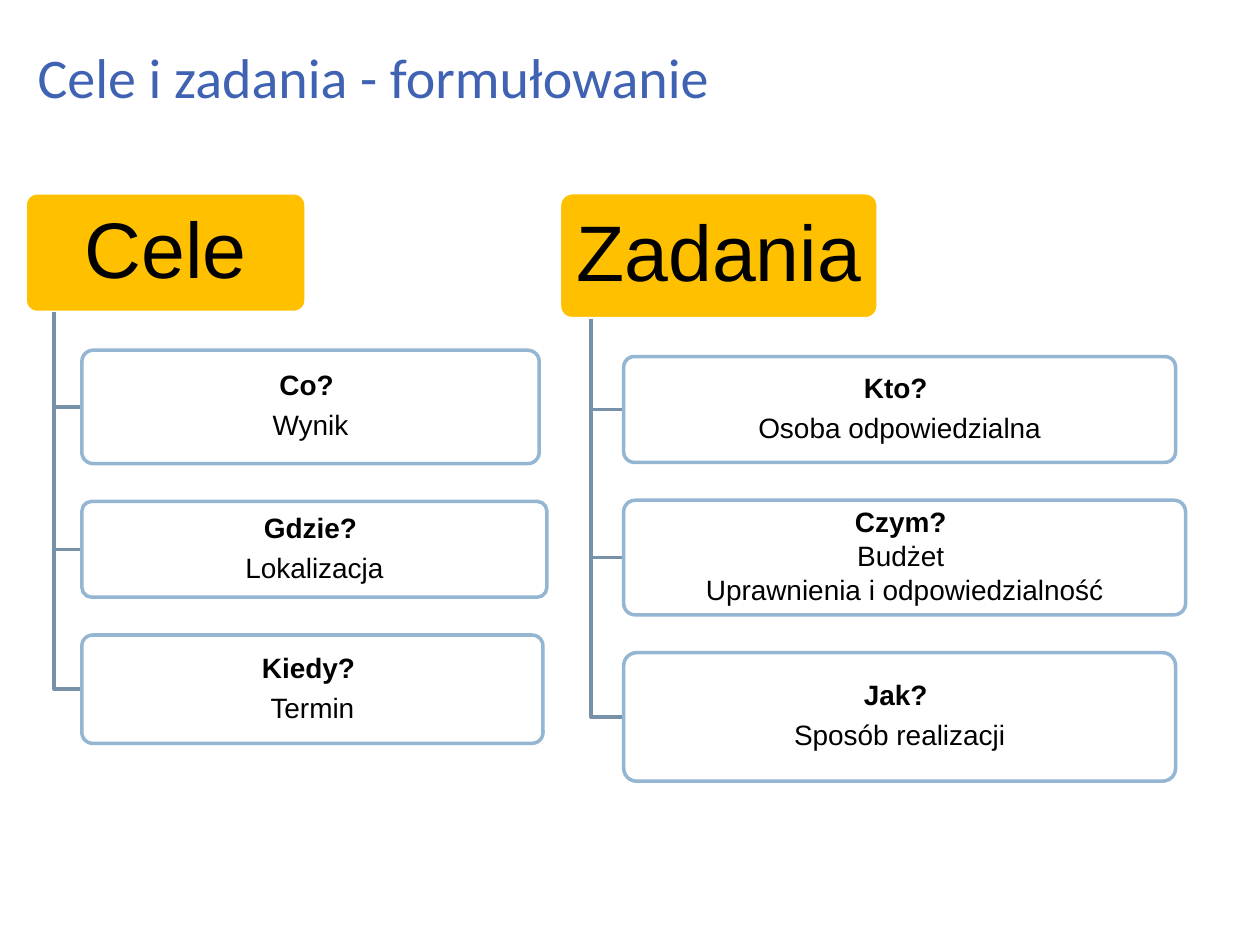
"""Build the slide on wording goals and tasks as two branching lists."""
import pptx
import pptx.dml.color
import pptx.enum.shapes
import pptx.enum.text
import pptx.oxml.ns
import pptx.util
from lxml import etree
from pptx.util import Inches

COLOURS = {"title": "4062B3", "header": "FFC000", "white": "FFFFFF",
           "text": "000000", "branch": "7792A8", "border": "94B6D2"}
GAP = 0.3


def rgb(name):
    return pptx.dml.color.RGBColor.from_string(COLOURS[name])


def write_text(box, text, size, font="Arial", colour="text", bold_first=False,
               align="CENTER", anchor="MIDDLE", inset=(0.1, 0.05), spacing=0.9, after=0):
    frame = box.text_frame
    frame.word_wrap = True
    frame.vertical_anchor = pptx.enum.text.MSO_ANCHOR[anchor]
    frame.margin_left = frame.margin_right = Inches(inset[0])
    frame.margin_top = frame.margin_bottom = Inches(inset[1])
    for index, line in enumerate(text.split("\n")):
        para = frame.paragraphs[0] if index == 0 else frame.add_paragraph()
        para.alignment = pptx.enum.text.PP_ALIGN[align]
        para.line_spacing = spacing
        para.space_after = pptx.util.Pt(after)
        span = para.add_run()
        span.text = line
        span.font.name = font
        span.font.size = pptx.util.Pt(size)
        span.font.bold = bold_first and index == 0
        span.font.color.rgb = rgb(colour)


deck = pptx.Presentation()
deck.slide_width, deck.slide_height = Inches(10), Inches(7.5)
page = deck.slides.add_slide(deck.slide_layouts[6])

title = page.shapes.add_textbox(Inches(0.2), Inches(0.29), Inches(7.8), Inches(0.87))
write_text(title, "Cele i zadania - formułowanie", size=32, font="Calibri",
           colour="title", align="LEFT", anchor="TOP", spacing=1.0)

columns = [
    {"name": "Cele", "left": 0.2, "width": 2.23, "height": 0.95, "trunk": 0.43, "indent": 0.65,
     "items": [("Co? \nWynik", 3.63, 0.9),
               ("Gdzie? \nLokalizacja", 3.69, 0.76),
               ("Kiedy? \nTermin", 3.66, 0.86)]},
    {"name": "Zadania", "left": 4.44, "width": 2.53, "height": 1.0, "trunk": 4.69, "indent": 4.95,
     "items": [("Kto? \nOsoba odpowiedzialna", 4.38, 0.84),
               ("Czym? \nBudżet \nUprawnienia i odpowiedzialność", 4.46, 0.91),
               ("Jak? \nSposób realizacji", 4.38, 1.02)]},
]

for column in columns:
    header_top = 1.53
    header_bottom = header_top + column["height"]
    boxes = [(column["name"], column["left"], header_top, column["width"], column["height"])]
    top = header_bottom + GAP
    for text, width, height in column["items"]:
        boxes.append((text, column["indent"], top, width, height))
        top += height + GAP

    for index, (text, left, top, width, height) in enumerate(boxes):
        is_header = index == 0
        if not is_header:
            middle = top + height / 2
            builder = page.shapes.build_freeform(Inches(column["trunk"]), Inches(header_bottom))
            builder.add_line_segments([(Inches(column["trunk"]), Inches(middle)),
                                       (Inches(left), Inches(middle))], close=False)
            branch = builder.convert_to_shape()
            branch.shadow.inherit = False
            branch.fill.background()
            branch.line.color.rgb = rgb("branch")
            branch.line.width = pptx.util.Pt(2)

        box = page.shapes.add_shape(pptx.enum.shapes.MSO_SHAPE.ROUNDED_RECTANGLE,
                                    Inches(left), Inches(top), Inches(width), Inches(height))
        box.adjustments[0] = 0.1
        box.shadow.inherit = False
        box.fill.solid()
        box.fill.fore_color.rgb = rgb("header" if is_header else "white")
        box.line.color.rgb = rgb("white" if is_header else "border")
        box.line.width = pptx.util.Pt(2)
        if is_header:
            write_text(box, text, size=45, inset=(0.1, 0.06))
        else:
            fill_colour = box._element.spPr.find(pptx.oxml.ns.qn("a:solidFill"))[0]
            etree.SubElement(fill_colour, pptx.oxml.ns.qn("a:alpha"), val="90000")
            after = 2 if text.count("\n") > 1 else 5.6
            write_text(box, text, size=16, bold_first=True, inset=(0.05, 0.04), after=after)

deck.save("out.pptx")
